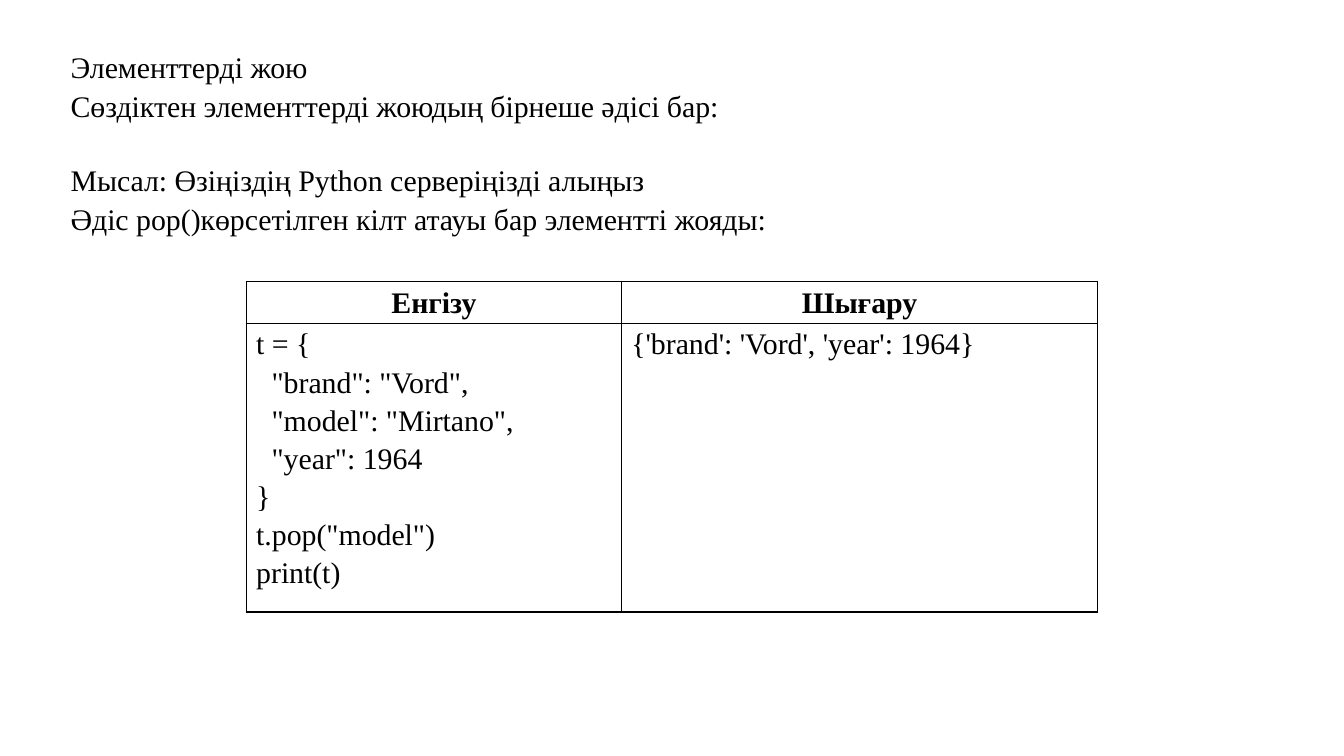
import dataclasses

import pptx
import pptx.dml.color
import pptx.enum.text
import pptx.oxml.ns
import pptx.presentation
import pptx.shapes.autoshape
import pptx.slide
import pptx.table
import pptx.text.text
import pptx.util
from lxml import etree

EMU_PER_PX = 9525
FONT = "Times New Roman"
FONT_SIZE = pptx.util.Pt(16)
BORDER_WIDTH = pptx.util.Pt(1)
COLOURS = {"ink": "000000", "paper": "FFFFFF"}
ALIGN = pptx.enum.text.PP_ALIGN


@dataclasses.dataclass(frozen=True)
class Line:
    text: str
    bold: bool = False
    align: ALIGN = ALIGN.LEFT
    indent: int = 0
    space_before: float = 0


@dataclasses.dataclass(frozen=True)
class Box:
    left: int
    top: int
    width: int
    height: int


INTRO_BOX = Box(41, 28, 884, 142)
INTRO = [
    Line("Элементтерді жою"),
    Line("Сөздіктен элементтерді жоюдың бірнеше әдісі бар:"),
    Line("Мысал: Өзіңіздің Python серверіңізді алыңыз", space_before=19.1),
    Line("Әдіс pop()көрсетілген кілт атауы бар элементті жояды:"),
]

CODE_INDENT = 11
TABLE_LEFT, TABLE_TOP = 176, 201
COLUMN_WIDTHS = [268, 340]
ROW_HEIGHTS = [30, 206]
CELL_MARGIN = 7
TABLE_ROWS = [
    [[Line(title, bold=True, align=ALIGN.CENTER)] for title in ("Енгізу", "Шығару")],
    [
        [
            Line("t = {"),
            Line('"brand": "Vord",', indent=CODE_INDENT),
            Line('"model": "Mirtano",', indent=CODE_INDENT),
            Line('"year": 1964', indent=CODE_INDENT),
            Line("}"),
            Line('t.pop("model")'),
            Line("print(t)"),
        ],
        [Line("{'brand': 'Vord', 'year': 1964}")],
    ],
]


def px(length: int) -> pptx.util.Emu:
    return pptx.util.Emu(length * EMU_PER_PX)


def colour(name: str) -> pptx.dml.color.RGBColor:
    return pptx.dml.color.RGBColor.from_string(COLOURS[name])


def write_lines(frame: pptx.text.text.TextFrame, lines: list[Line], spacing: float) -> None:
    for index, line in enumerate(lines):
        paragraph = frame.paragraphs[0] if index == 0 else frame.add_paragraph()
        paragraph.alignment = line.align
        paragraph.line_spacing = spacing
        paragraph.space_before = pptx.util.Pt(line.space_before)
        if line.indent:
            paragraph._p.get_or_add_pPr().set("marL", str(px(line.indent)))
        run = paragraph.add_run()
        run.text = line.text
        run.font.name = FONT
        run.font.size = FONT_SIZE
        run.font.bold = line.bold
        run.font.color.rgb = colour("ink")


def add_intro(slide: pptx.slide.Slide, box: Box, lines: list[Line]) -> None:
    shape = slide.shapes.add_textbox(px(box.left), px(box.top), px(box.width), px(box.height))
    shape.text_frame.word_wrap = True
    write_lines(shape.text_frame, lines, spacing=1.08)


def set_borders(cell: pptx.table._Cell) -> None:
    """Draw all four edges; they must precede the fill in the cell properties."""
    properties = cell._tc.get_or_add_tcPr()
    for position, edge in enumerate(("lnL", "lnR", "lnT", "lnB")):
        border = etree.Element(pptx.oxml.ns.qn(f"a:{edge}"), w=str(BORDER_WIDTH))
        fill = etree.SubElement(border, pptx.oxml.ns.qn("a:solidFill"))
        etree.SubElement(fill, pptx.oxml.ns.qn("a:srgbClr"), val=COLOURS["ink"])
        properties.insert(position, border)


def fill_cell(cell: pptx.table._Cell, lines: list[Line]) -> None:
    cell.margin_left = cell.margin_right = px(CELL_MARGIN)
    cell.margin_top = cell.margin_bottom = 0
    cell.fill.solid()
    cell.fill.fore_color.rgb = colour("paper")
    set_borders(cell)
    write_lines(cell.text_frame, lines, spacing=1.15)


def add_code_table(slide: pptx.slide.Slide, rows: list[list[list[Line]]]) -> None:
    shape = slide.shapes.add_table(
        len(ROW_HEIGHTS), len(COLUMN_WIDTHS), px(TABLE_LEFT), px(TABLE_TOP),
        px(sum(COLUMN_WIDTHS)), px(sum(ROW_HEIGHTS)),
    )
    table = shape.table
    table.first_row = table.horz_banding = False
    for column, width in zip(table.columns, COLUMN_WIDTHS):
        column.width = px(width)
    for row, height, contents in zip(table.rows, ROW_HEIGHTS, rows):
        row.height = px(height)
        for cell, lines in zip(row.cells, contents):
            fill_cell(cell, lines)


def main() -> None:
    presentation = pptx.Presentation()
    presentation.slide_width, presentation.slide_height = px(960), px(540)
    slide = presentation.slides.add_slide(presentation.slide_layouts[6])
    add_intro(slide, INTRO_BOX, INTRO)
    add_code_table(slide, TABLE_ROWS)
    presentation.save("out.pptx")


if __name__ == "__main__":
    main()
